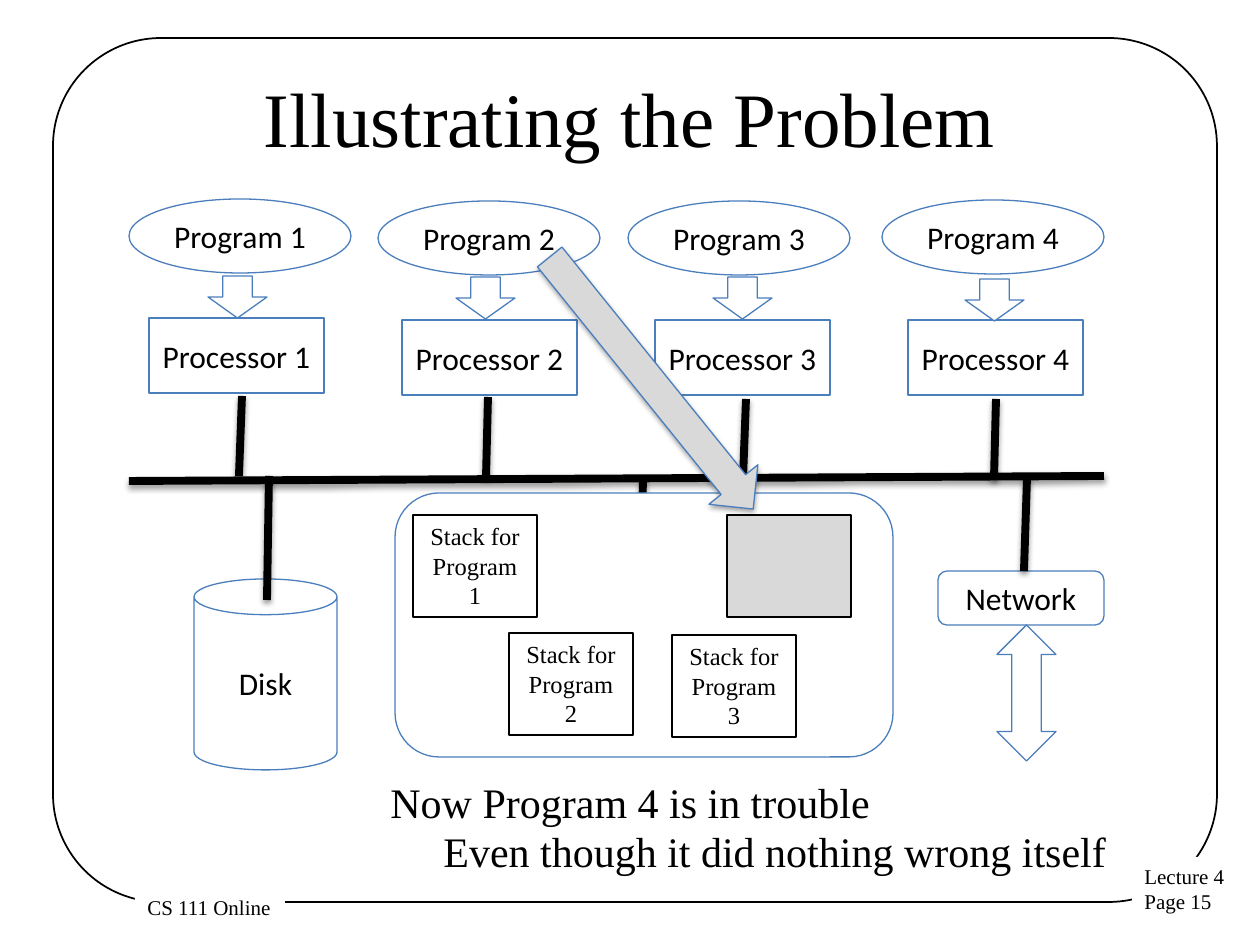
"""Build a slide showing how one program can damage another program's stack."""
import pptx
import pptx.util
import pptx.dml.color
import pptx.enum.shapes
import pptx.enum.text
import pptx.oxml
import pptx.oxml.ns

PX = 914400 / 126
COLORS = {"black": "000000", "white": "FFFFFF", "blue": "4B7EBC", "gray": "D9D9D9"}
SHAPES = pptx.enum.shapes.MSO_SHAPE
ANCHORS = pptx.enum.text.MSO_ANCHOR
ALIGNS = pptx.enum.text.PP_ALIGN
BODY = {"name": "Calibri", "size": pptx.util.Pt(18)}
SERIF = "Times New Roman"
SMALL = {"name": SERIF, "size": pptx.util.Pt(12)}
STACK = {"name": SERIF, "size": pptx.util.Pt(14)}
NOTE = {"name": SERIF, "size": pptx.util.Pt(24)}
TITLE = {"name": SERIF, "size": pptx.util.Pt(44)}

presentation = pptx.Presentation()
presentation.slide_width = round(1260 * PX)
presentation.slide_height = round(945 * PX)
slide = presentation.slides.add_slide(presentation.slide_layouts[5])


def write_text(shape, text, font, align=ALIGNS.CENTER, anchor=ANCHORS.MIDDLE, wrap=True):
    frame = shape.text_frame
    frame.text = text
    frame.word_wrap = wrap
    frame.vertical_anchor = anchor
    for paragraph in frame.paragraphs:
        paragraph.alignment = align
        for run in paragraph.runs:
            for name, value in font.items():
                setattr(run.font, name, value)
            run.font.color.rgb = pptx.dml.color.RGBColor.from_string(COLORS["black"])


def add_box(kind, box, fill=None, line="blue", width=0.75):
    shape = slide.shapes.add_shape(kind, *[round(value * PX) for value in box])
    shape.shadow.inherit = False
    if fill:
        shape.fill.solid()
        shape.fill.fore_color.rgb = pptx.dml.color.RGBColor.from_string(COLORS[fill])
    else:
        shape.fill.background()
    if line:
        shape.line.color.rgb = pptx.dml.color.RGBColor.from_string(COLORS[line])
        shape.line.width = pptx.util.Pt(width)
    else:
        shape.line.fill.background()
    return shape


frame_border = add_box(SHAPES.ROUNDED_RECTANGLE, (53, 38, 1164, 864), line="black", width=1)
frame_border.adjustments[0] = 0.125
for text, box in (("Lecture 4\nPage 15", (1132, 857, 107, 64)), ("CS 111 Online", (135, 888, 150, 38))):
    label = add_box(SHAPES.RECTANGLE, box, "white", None)
    write_text(label, text, SMALL, ALIGNS.LEFT, ANCHORS.TOP, False)

title = slide.shapes.title
for name, value in {"left": 63, "top": 38, "width": 1134, "height": 158}.items():
    setattr(title, name, round(value * PX))
write_text(title, "Illustrating the Problem", TITLE)

program_places = ((129, 199), (378, 201), (628, 201), (882, 200))
arrow_places = ((208, 276), (456, 277), (713, 277), (965, 279))
for index in range(4):
    processor = add_box(SHAPES.RECTANGLE, (149 + 253 * index, 320 if index else 318, 175, 75))
    write_text(processor, f"Processor {index + 1}", BODY)
    program = add_box(SHAPES.OVAL, (*program_places[index], 222, 74))
    write_text(program, f"Program {index + 1}", BODY)
    add_box(SHAPES.DOWN_ARROW, (*arrow_places[index], 59, 42), "white")

disk = add_box(SHAPES.CAN, (194, 579, 143, 191), "white")
write_text(disk, "Disk", BODY)
network = add_box(SHAPES.ROUNDED_RECTANGLE, (938, 571, 166, 54), "white")
write_text(network, "Network", BODY)
add_box(SHAPES.UP_DOWN_ARROW, (997, 625, 59, 136), "white")

bus_lines = (
    (129, 481, 1104, 476),
    (239, 476, 242, 396),
    (486, 478, 488, 397),
    (743, 480, 746, 399),
    (994, 480, 996, 399),
    (641, 559, 643, 480),
    (267, 600, 269, 476),
    (1024, 571, 1027, 478),
)
shadowed = []
for ends in bus_lines:
    connector = slide.shapes.add_connector(
        pptx.enum.shapes.MSO_CONNECTOR.STRAIGHT, *[round(value * PX) for value in ends]
    )
    connector.line.color.rgb = pptx.dml.color.RGBColor.from_string(COLORS["black"])
    connector.line.width = pptx.util.Pt(4.5)
    shadowed.append((connector, 38))

add_box(SHAPES.ROUNDED_RECTANGLE, (395, 493, 498, 264), "white")
for number, place in enumerate(((413, 515), (509, 633), (672, 635)), 1):
    stack = add_box(SHAPES.RECTANGLE, (*place, 124, 102), line="black")
    write_text(stack, f"Stack for Program {number}", STACK, anchor=ANCHORS.TOP)

damage_arrow = add_box(SHAPES.DOWN_ARROW, (620, 221, 63, 324), "gray")
damage_arrow.rotation = 321.1
shadowed.append((damage_arrow, 35))
add_box(SHAPES.RECTANGLE, (727, 515, 124, 102), "gray", "black")

for shape, opacity in shadowed:
    properties = shape._element.spPr
    for effects in properties.findall(pptx.oxml.ns.qn("a:effectLst")):
        properties.remove(effects)
    properties.append(pptx.oxml.parse_xml(
        f'<a:effectLst {pptx.oxml.ns.nsdecls("a")}>'
        '<a:outerShdw blurRad="39370" dist="20320" dir="5400000" rotWithShape="0">'
        f'<a:srgbClr val="{COLORS["black"]}"><a:alpha val="{opacity * 1000}"/></a:srgbClr>'
        "</a:outerShdw></a:effectLst>"
    ))

for text, box in (
    ("Now Program 4 is in trouble", (378, 770, 512, 63)),
    ("Even though it did nothing wrong itself", (431, 819, 700, 63)),
):
    note = slide.shapes.add_textbox(*[round(value * PX) for value in box])
    write_text(note, text, NOTE, ALIGNS.LEFT, ANCHORS.TOP, False)

presentation.save("out.pptx")
